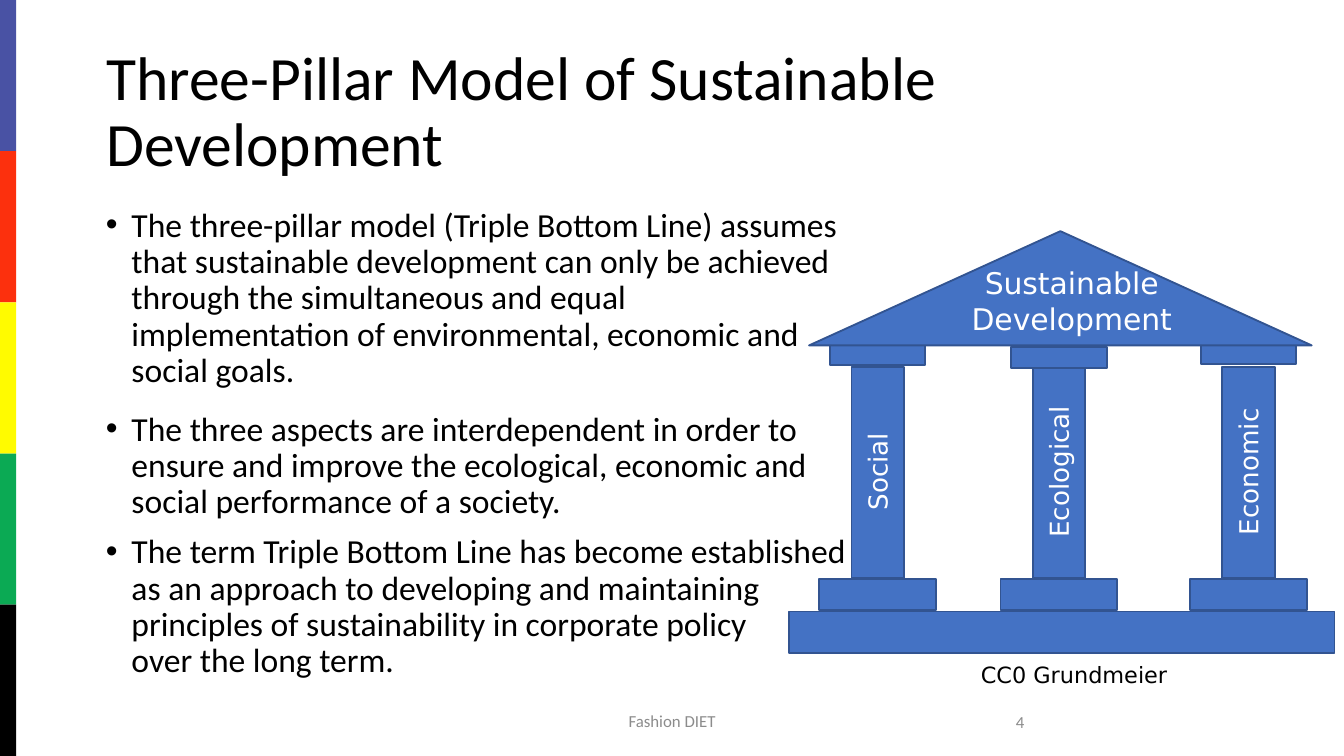
import pptx
import pptx.util
import pptx.dml.color
import pptx.enum.shapes
import pptx.enum.text
from lxml import etree

Inches, Pt = pptx.util.Inches, pptx.util.Pt
SHAPE = pptx.enum.shapes.MSO_SHAPE
ALIGN = pptx.enum.text.PP_ALIGN
ANCHOR = pptx.enum.text.MSO_ANCHOR

W, H = 10, 5.625
STRIPES = ["4952A4", "FC300D", "FFFB00", "0BAA54", "000000"]
BLUE, EDGE, GREY = "4472C4", "325491", "8C8C8C"

BULLETS = [  # text, space before
    ("The three-pillar model (Triple Bottom Line) assumes that sustainable "
     "development can only be achieved through the simultaneous and equal "
     "implementation of environmental, economic and social goals.", 0),
    ("The three aspects are interdependent in order to ensure and improve the "
     "ecological, economic and social performance of a society.", 12),
    ("The term Triple Bottom Line has become established as an approach to "
     "developing and maintaining principles of sustainability in corporate "
     "policy\vover the long term.", 7.5),
]
PILLARS = [  # label, centre, top of capital, label width
    ("Social", 6.53, 2.56, 1.52),
    ("Ecological", 7.88, 2.58, 1.72),
    ("Economic", 9.29, 2.55, 1.57),
]


def rgb(color):
    return pptx.dml.color.RGBColor.from_string(color)


def write(p, text, size=18, font="Calibri", color="000000", align=ALIGN.LEFT,
          spacing=None, before=0):
    """Fill a paragraph with formatted text."""
    p.text = text
    p.alignment = align
    p.line_spacing = spacing
    p.space_before = Pt(before)
    for r in p.runs:
        r.font.size, r.font.name = Pt(size), font
        r.font.color.rgb = rgb(color)


def add_bullet(p, indent=0.19):
    pPr = p._p.get_or_add_pPr()
    pPr.set("marL", str(Inches(indent)))
    pPr.set("indent", str(-Inches(indent)))
    ns = pPr.nsmap["a"]
    etree.SubElement(pPr, f"{{{ns}}}buFont", typeface="Arial")
    etree.SubElement(pPr, f"{{{ns}}}buChar", char="•")


def add_text(shapes, x, y, w, h, text, anchor=ANCHOR.TOP, rotation=0, **fmt):
    s = shapes.add_textbox(Inches(x), Inches(y), Inches(w), Inches(h))
    s.rotation = rotation
    tf = s.text_frame
    tf.word_wrap = True
    tf.vertical_anchor = anchor
    write(tf.paragraphs[0], text, **fmt)


def add_block(shapes, x, y, w, h, kind=SHAPE.RECTANGLE, fill=BLUE, line=EDGE):
    s = shapes.add_shape(kind, Inches(x), Inches(y), Inches(w), Inches(h))
    s.shadow.inherit = False
    s.fill.solid()
    s.fill.fore_color.rgb = rgb(fill)
    if line:
        s.line.color.rgb = rgb(line)
        s.line.width = Pt(1)
    else:
        s.line.fill.background()


def add_stripes(slide):
    shapes = slide.shapes.add_group_shape().shapes
    step = H / len(STRIPES)
    for i, color in enumerate(STRIPES):
        add_block(shapes, 0, i * step, 0.12, step, fill=color, line=None)


def add_title(slide, text):
    s = slide.shapes.title
    s.left, s.top, s.width, s.height = map(Inches, (0.69, 0.3, 8.62, 1.09))
    s.text_frame.vertical_anchor = ANCHOR.MIDDLE
    write(s.text_frame.paragraphs[0], text, size=33, spacing=0.9)


def add_body(slide):
    s = slide.shapes.add_textbox(*map(Inches, (0.69, 1.5, 5.73, 3.57)))
    tf = s.text_frame
    tf.word_wrap = True
    for i, (text, before) in enumerate(BULLETS):
        p = tf.add_paragraph() if i else tf.paragraphs[0]
        write(p, text, spacing=0.9, before=before)
        add_bullet(p)


def add_temple(slide):
    shapes = slide.shapes.add_group_shape().shapes
    label = dict(font="DejaVu Sans", color="FFFFFF", align=ALIGN.CENTER)
    # Floor, then base, shaft and capital of each pillar
    add_block(shapes, 5.87, 4.55, 4.06, 0.31)
    for text, x, top, width in PILLARS:
        for y, w, h in [(4.31, 0.87, 0.23), (2.73, 0.39, 1.57), (top, 0.71, 0.16)]:
            add_block(shapes, x - w / 2, y, w, h)
        add_text(shapes, x - width / 2, 3.34, width, 0.34, text,
                 rotation=270, size=14, **label)
    # Roof
    add_block(shapes, 6.02, 1.72, 3.74, 0.85, kind=SHAPE.ISOSCELES_TRIANGLE)
    add_text(shapes, 7.05, 1.92, 1.85, 0.64, "Sustainable Development",
             size=16, **label)


def main():
    prs = pptx.Presentation()
    prs.slide_width, prs.slide_height = Inches(W), Inches(H)
    slide = prs.slides.add_slide(prs.slide_layouts[5])

    add_stripes(slide)
    add_title(slide, "Three-Pillar Model of Sustainable Development")
    add_body(slide)
    # Footer and slide number
    small = dict(size=9, color=GREY, anchor=ANCHOR.MIDDLE)
    add_text(slide.shapes, 3.31, 5.21, 3.38, 0.3, "Fashion DIET",
             align=ALIGN.CENTER, **small)
    add_text(slide.shapes, 5.47, 5.22, 2.25, 0.3, "4", align=ALIGN.RIGHT, **small)
    # Diagram and its credit
    add_temple(slide)
    add_text(slide.shapes, 7.2, 4.87, 1.77, 0.3, "CC0 Grundmeier",
             size=12, font="DejaVu Sans")
    prs.save("out.pptx")


if __name__ == "__main__":
    main()
